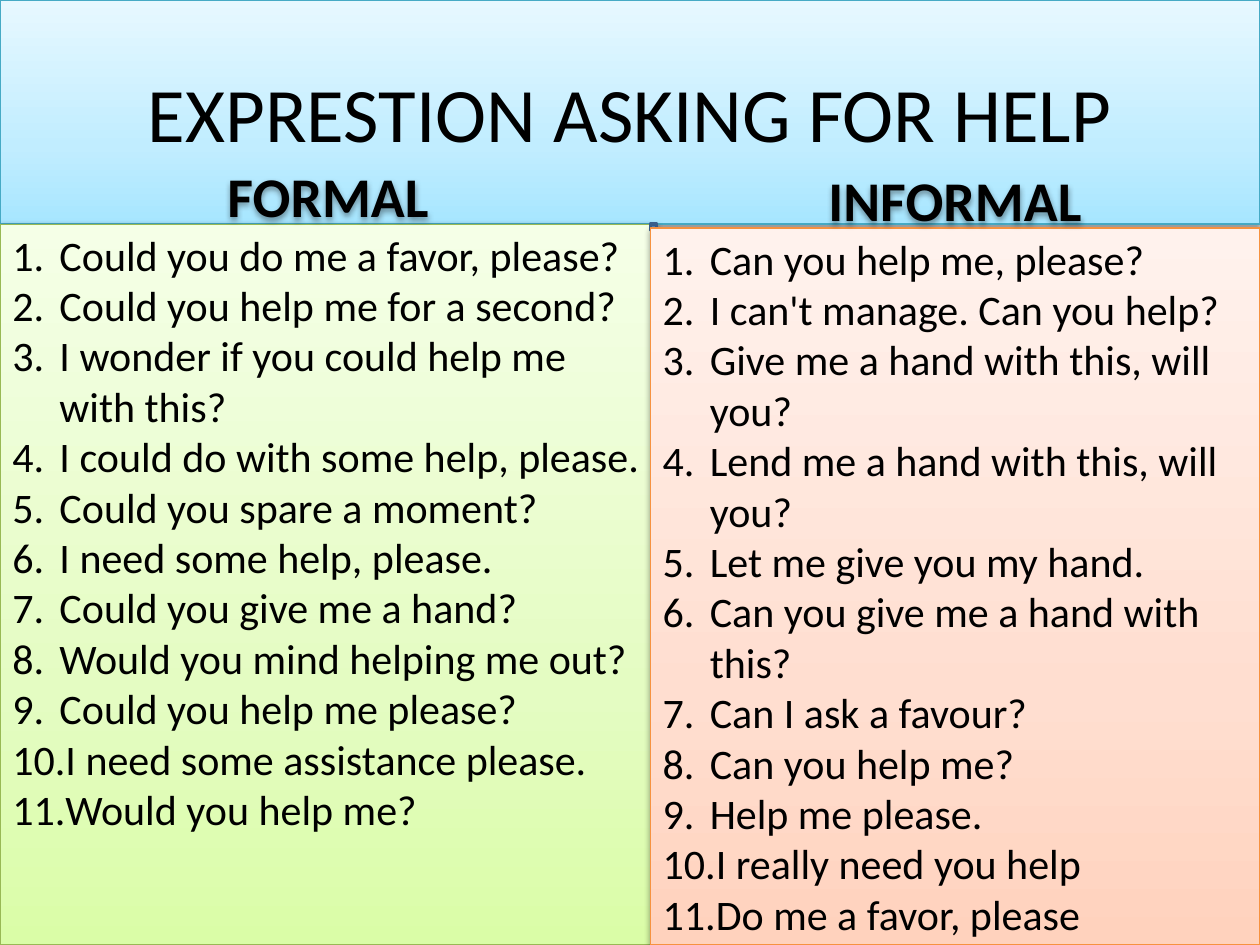
from pptx import Presentation, oxml
from pptx.dml import color
from pptx.enum import shapes, text
from pptx.oxml import ns
from pptx.util import Cm, Pt

FORMAL = [
    "Could you do me a favor, please?",
    "Could you help me for a second?",
    "I wonder if you could help me with this?",
    "I could do with some help, please.",
    "Could you spare a moment?",
    "I need some help, please.",
    "Could you give me a hand?",
    "Would you mind helping me out?",
    "Could you help me please?",
    "I need some assistance please.",
    "Would you help me?",
]
INFORMAL = [
    "Can you help me, please?",
    "I can't manage. Can you help?",
    "Give me a hand with this, will you?",
    "Lend me a hand with this, will you?",
    "Let me give you my hand.",
    "Can you give me a hand with this?",
    "Can I ask a favour?",
    "Can you help me?",
    "Help me please.",
    "I really need you help",
    "Do me a favor, please",
]


def rgb(value):
    """Return a colour from a hex string."""
    return color.RGBColor.from_string(value)


def add_shadow(box):
    """Give a box a soft shadow that falls downwards."""
    box.shadow.inherit = False
    effects = box._element.spPr.find(ns.qn("a:effectLst"))
    effects.append(oxml.parse_xml(
        f'<a:outerShdw {ns.nsdecls("a")} blurRad="40000" dist="20000" dir="5400000" '
        'rotWithShape="0"><a:srgbClr val="000000"><a:alpha val="38000"/></a:srgbClr>'
        '</a:outerShdw>'))


def add_panel(page, area, stops, outline):
    """Draw a shadowed rectangle with a gradient that runs from bottom to top."""
    box = page.shapes.add_shape(shapes.MSO_SHAPE.RECTANGLE, *map(Cm, area))
    box.line.color.rgb = rgb(outline)
    box.line.width = Pt(0.75)
    add_shadow(box)
    marks = "".join(f'<a:gs pos="{place * 1000}"><a:srgbClr val="{value}"/></a:gs>'
                    for place, value in zip((0, 35, 100), stops))
    box._element.spPr.insert(2, oxml.parse_xml(
        f'<a:gradFill {ns.nsdecls("a")} rotWithShape="1"><a:gsLst>{marks}</a:gsLst>'
        '<a:lin ang="16200000" scaled="0"/></a:gradFill>'))
    return box


def set_frame(box, anchor, top=0):
    """Set wrapping, anchor and insets, and return the text frame."""
    frame = box.text_frame
    frame.word_wrap = True
    frame.vertical_anchor = anchor
    frame.margin_left = frame.margin_right = Cm(0.25)
    frame.margin_top, frame.margin_bottom = Cm(top), 0
    return frame


def write(para, words, size=24, bold=False, align=text.PP_ALIGN.CENTER):
    """Fill a paragraph with formatted words."""
    para.text = words
    para.alignment = align
    para.font.name = "Calibri"
    para.font.size = Pt(size)
    para.font.bold = bold
    para.font.color.rgb = rgb("000000")


def add_title(page, area):
    """Place the title banner."""
    box = add_panel(page, area, ("A7E6FF", "C1EDFF", "E7F8FF"), "46AAC5")
    frame = set_frame(box, text.MSO_ANCHOR.MIDDLE)
    write(frame.paragraphs[0], "EXPRESTION ASKING FOR HELP", size=44)


def add_column(page, area, heading, phrases, stops, outline):
    """Place a numbered list panel with its heading just above."""
    left, top, width, height = area
    frame = set_frame(add_panel(page, area, stops, outline), text.MSO_ANCHOR.TOP, 0.1)
    for index, phrase in enumerate(phrases):
        para = frame.add_paragraph() if index else frame.paragraphs[0]
        props = para._p.get_or_add_pPr()
        props.set("marL", str(Cm(0.95)))
        props.set("indent", str(-Cm(0.95)))
        props.append(oxml.parse_xml(
            f'<a:buFont {ns.nsdecls("a")} typeface="+mj-lt"/>'))
        props.append(oxml.parse_xml(
            f'<a:buAutoNum {ns.nsdecls("a")} type="arabicPeriod"/>'))
        write(para, phrase, align=text.PP_ALIGN.LEFT)
        para.line_spacing = Pt(28.8)
    label = page.shapes.add_textbox(Cm(left), Cm(top - 1.27), Cm(width), Cm(1.37))
    add_shadow(label)
    frame = set_frame(label, text.MSO_ANCHOR.TOP)
    write(frame.paragraphs[0], heading, size=32, bold=True)


def add_joint(page, area):
    """Place the small square where the two columns meet."""
    box = page.shapes.add_shape(shapes.MSO_SHAPE.RECTANGLE, *map(Cm, area))
    box.shadow.inherit = False
    box.fill.solid()
    box.fill.fore_color.rgb = rgb("4F81BD")
    box.line.color.rgb = rgb("3A5F8C")
    box.line.width = Pt(2)


def main():
    """Build the slide and save the deck."""
    deck = Presentation()
    deck.slide_width, deck.slide_height = Cm(25.4), Cm(19.05)
    page = deck.slides.add_slide(deck.slide_layouts[6])
    add_title(page, (0, 0, 25.4, 4.52))
    add_column(page, (0, 4.52, 13.23, 14.53), "FORMAL", FORMAL,
               ("DAFDA7", "E4FCC2", "F5FFE7"), "98B955")
    add_joint(page, (13.11, 4.52, 0.13, 0.13))
    add_column(page, (13.11, 4.6, 12.29, 14.45), "INFORMAL", INFORMAL,
               ("FFD2BD", "FFDED0", "FFF2ED"), "F69240")
    deck.save("out.pptx")


if __name__ == "__main__":
    main()
